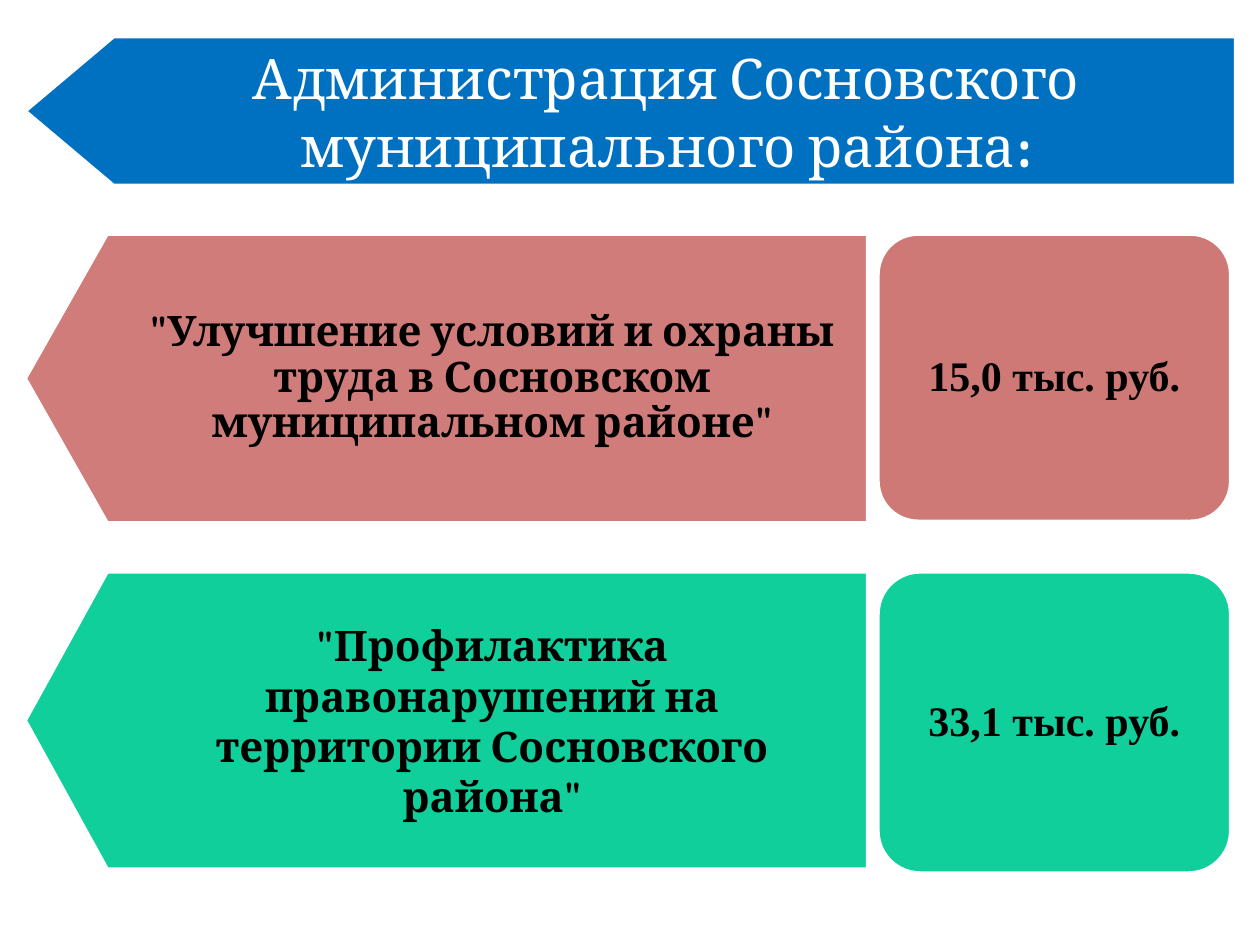
from pptx import Presentation
from pptx.dml.color import RGBColor
from pptx.enum.shapes import MSO_SHAPE as Shape
from pptx.enum.text import MSO_ANCHOR as Anchor, PP_ALIGN as Align
from pptx.util import Cm, Pt

COLORS = {
    "header": "0070C0",
    "safety": "D07C7A",
    "safety_sum": "CF7977",
    "prevention": "10CF9B",
    "light": "FFFFFF",
    "dark": "000000",
}
LEFT = 0.51
SUM_LEFT, SUM_WIDTH = 17.7, 7.11


def add_arrow(top, width, height, tip):
    right, bottom = LEFT + width, top + height
    outline = [(LEFT + tip, bottom), (LEFT, top + height / 2),
               (LEFT + tip, top), (right, top)]
    builder = slide.shapes.build_freeform(Cm(right), Cm(bottom))
    builder.add_line_segments([(Cm(x), Cm(y)) for x, y in outline])
    return builder.convert_to_shape()


def style(block, fill, runs, font_name, size, color, margins, spacing=None):
    block.shadow.inherit = False
    block.fill.solid()
    block.fill.fore_color.rgb = RGBColor.from_string(COLORS[fill])
    block.line.color.rgb = RGBColor.from_string(COLORS["light"])
    block.line.width = Pt(2)
    frame = block.text_frame
    frame.word_wrap = True
    frame.vertical_anchor = Anchor.MIDDLE
    frame.margin_left, frame.margin_top, frame.margin_right, frame.margin_bottom = map(Cm, margins)
    paragraph = frame.paragraphs[0]
    paragraph.alignment = Align.CENTER
    if spacing:
        paragraph.line_spacing = spacing
        paragraph.space_after = Pt(8)
    paragraph.font.name = font_name
    paragraph.font.size = Pt(size)
    paragraph.font.color.rgb = RGBColor.from_string(COLORS[color])
    for text, bold in runs:
        run = paragraph.add_run()
        run.text = text
        run.font.bold = bold


presentation = Presentation()
presentation.slide_width, presentation.slide_height = Cm(25.4), Cm(19.05)
slide = presentation.slides.add_slide(presentation.slide_layouts[6])

header = add_arrow(0.74, 24.4, 3, 1.78)
style(header, "header", [("Администрация Сосновского муниципального района", False), (":", True)],
      "Cambria", 32, "light", (2.08, 0.33, 0.64, 0.33))

programs = [
    (4.72, 5.82, 5.79, "safety", "safety_sum", 0.9,
     '"Улучшение условий и охраны труда в Сосновском муниципальном районе"', "15,0 тыс. руб."),
    (11.53, 5.99, 6.07, "prevention", "prevention", None,
     '"Профилактика правонарушений на территории Сосновского района"', "33,1 тыс. руб."),
]
for top, height, sum_height, fill, sum_fill, spacing, title, amount in programs:
    program = add_arrow(top, 16.98, height, 1.65)
    style(program, fill, [(title, True)], "Cambria", 24, "dark", (2.24, 0.2, 0.4, 0.2), spacing)

    funding = slide.shapes.add_shape(
        Shape.ROUNDED_RECTANGLE, Cm(SUM_LEFT), Cm(top), Cm(SUM_WIDTH), Cm(sum_height))
    funding.adjustments[0] = 0.14
    style(funding, sum_fill, [(amount, True)], "Times New Roman", 24, "dark", (0.14,) * 4, 0.9)

presentation.save("out.pptx")
